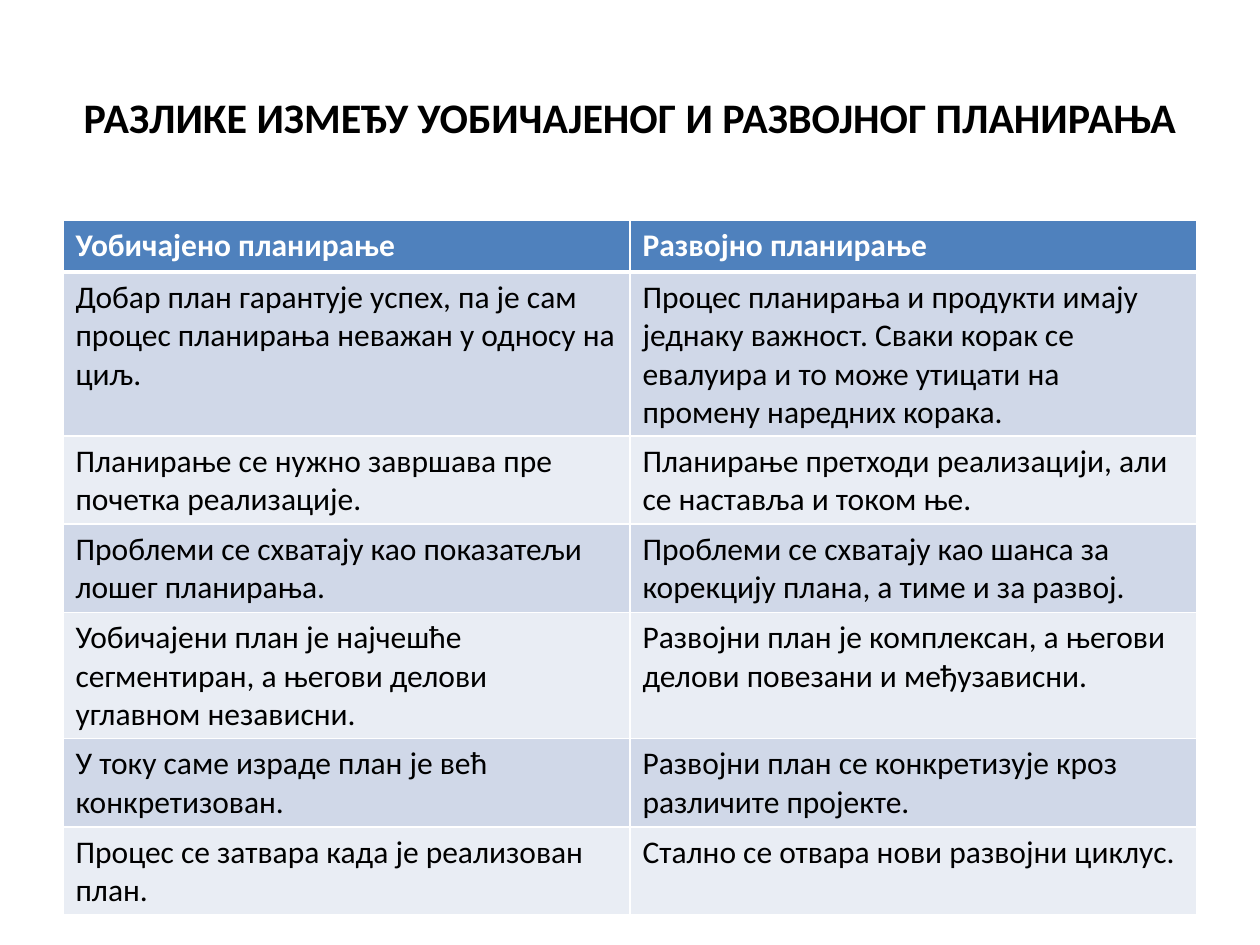
from pptx import Presentation
from pptx.dml.color import RGBColor
from pptx.enum.text import MSO_ANCHOR as ANCHOR, PP_ALIGN as ALIGN
from pptx.oxml.ns import qn
from pptx.util import Inches, Pt
from lxml.etree import SubElement

BLACK, WHITE = "000000", "FFFFFF"
HEADER_FILL = "4F81BD"
BAND_FILLS = ("D0D8E8", "E9EDF4")
ROW_HEIGHT = 0.41

TITLE = "РАЗЛИКЕ ИЗМЕЂУ УОБИЧАЈЕНОГ И РАЗВОЈНОГ ПЛАНИРАЊА"
ROWS = [
    ("Уобичајено планирање", "Развојно планирање"),
    ("Добар план гарантује успех, па је сам процес планирања неважан у односу на циљ.",
     "Процес планирања и продукти имају једнаку важност. Сваки корак се евалуира "
     "и то може утицати на промену наредних корака."),
    ("Планирање се нужно завршава пре почетка реализације.",
     "Планирање претходи реализацији, али се наставља и током ње."),
    ("Проблеми се схватају као показатељи лошег планирања.",
     "Проблеми се схватају као шанса за корекцију плана, а тиме и за развој."),
    ("Уобичајени план је најчешће сегментиран, а његови делови углавном независни.",
     "Развојни план је комплексан, а његови делови повезани и међузависни."),
    ("У току саме израде план је већ конкретизован.",
     "Развојни план се конкретизује кроз различите пројекте."),
    ("Процес се затвара када је реализован план.",
     "Стално се отвара нови развојни циклус."),
]


def rgb(value):
    return RGBColor.from_string(value)


def write(tf, text, size=18, color=BLACK, bold=False, align=ALIGN.LEFT):
    p = tf.paragraphs[0]
    p.alignment = align
    r = p.add_run()
    r.text = text
    r.font.name = "Calibri"
    r.font.size = Pt(size)
    r.font.bold = bold
    r.font.color.rgb = rgb(color)


def set_borders(cell, color, **widths):
    """Draw cell borders; widths maps the sides L, R, T, B to points."""
    tc_pr = cell._tc.get_or_add_tcPr()
    for i, (side, width) in enumerate(widths.items()):
        ln = tc_pr.makeelement(qn(f"a:ln{side}"), w=str(Pt(width)))
        fill = SubElement(ln, qn("a:solidFill"))
        SubElement(fill, qn("a:srgbClr"), val=color)
        tc_pr.insert(i, ln)  # borders come before the fill


def add_title(slide, left, top, width, height):
    tf = slide.shapes.add_textbox(left, top, width, height).text_frame
    tf.word_wrap = True
    tf.vertical_anchor = ANCHOR.MIDDLE
    write(tf, TITLE, size=24, bold=True, align=ALIGN.CENTER)


def add_comparison(slide, left, top, width, height):
    """Add the table; its rows grow with their text to fill the height."""
    frame = slide.shapes.add_table(len(ROWS), 2, left, top, width, height)
    table = frame.table
    for i, texts in enumerate(ROWS):
        header = i == 0
        table.rows[i].height = Inches(ROW_HEIGHT)
        for j, text in enumerate(texts):
            cell = table.cell(i, j)
            cell.fill.solid()
            cell.fill.fore_color.rgb = rgb(HEADER_FILL if header else BAND_FILLS[(i - 1) % 2])
            set_borders(cell, WHITE, L=1, R=1, T=3 if i == 1 else 1, B=3 if header else 1)
            write(cell.text_frame, text, color=WHITE if header else BLACK, bold=header)
    frame.height = height


def main():
    prs = Presentation()
    prs.slide_width, prs.slide_height = Inches(10), Inches(7.5)
    slide = prs.slides.add_slide(prs.slide_layouts[6])
    add_title(slide, Inches(0.5), Inches(0.3), Inches(9), Inches(1.25))
    add_comparison(slide, Inches(0.5), Inches(1.75), Inches(9), Inches(5.51))
    prs.save("out.pptx")


if __name__ == "__main__":
    main()
